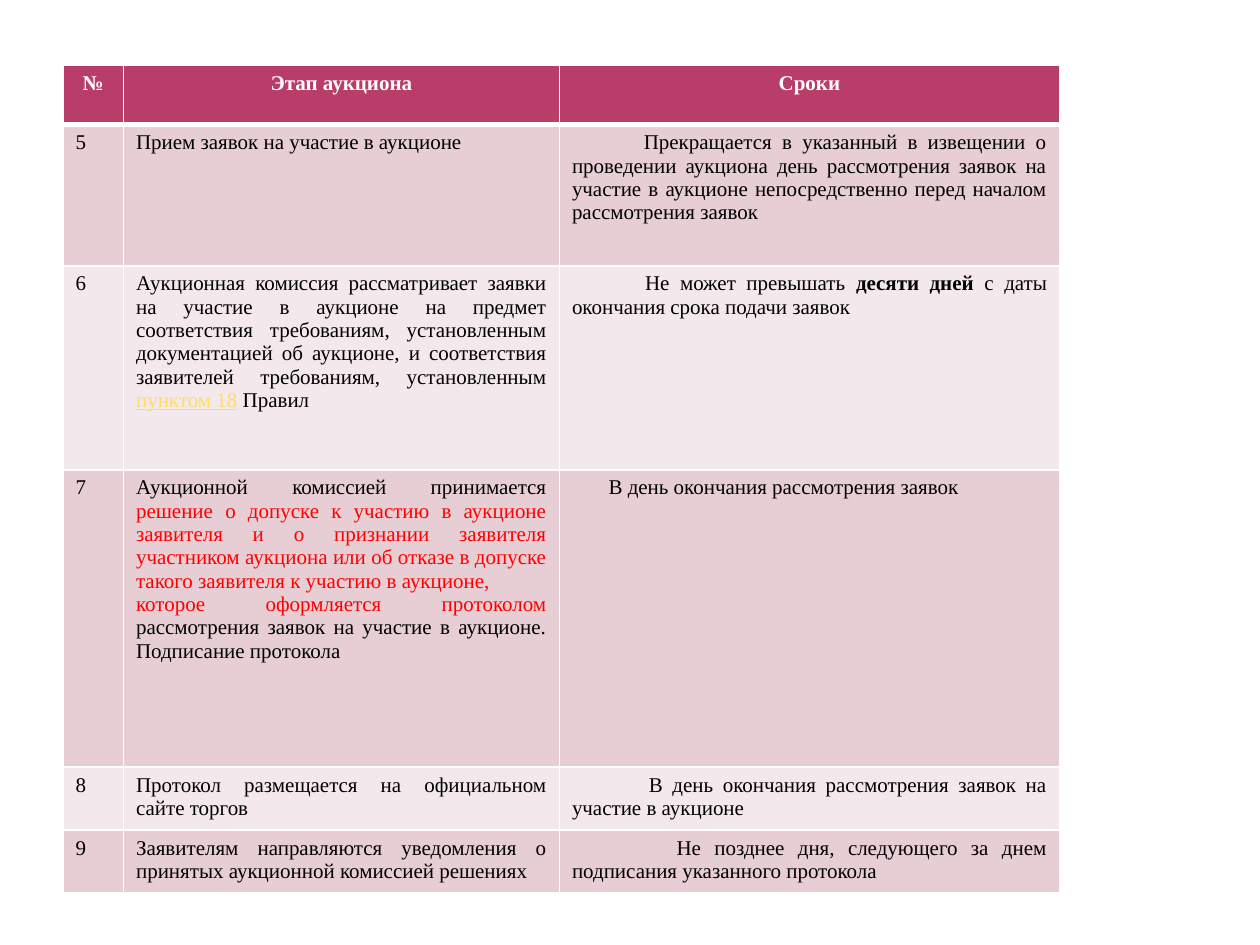
from lxml.etree import SubElement as Sub
from pptx import Presentation
from pptx.dml.color import RGBColor
from pptx.enum.text import PP_ALIGN as Align
from pptx.oxml.ns import qn
from pptx.util import Inches, Pt

# Content: a cell is a list of paragraphs, a paragraph a list of (text, style)
HEAD = ["№", "Этап аукциона", "Сроки"]
RED, LINK, BOLD = {"color": "FF0000"}, {"color": "FFDE66", "underline": True}, {"bold": True}

# Number, stage, term, first-line indent of the term
STAGES = [
    ("5", [[("Прием заявок на участие в аукционе", {})]],
     [[("Прекращается в указанный в извещении о проведении аукциона день рассмотрения "
        "заявок на участие в аукционе непосредственно перед началом рассмотрения заявок", {})]],
     0.57),
    ("6", [[("Аукционная комиссия рассматривает заявки на участие в аукционе на предмет "
             "соответствия требованиям, установленным документацией об аукционе, и "
             "соответствия заявителей требованиям, установленным ", {}),
            ("пунктом 18", LINK), (" Правил", {})]],
     [[("Не может превышать ", {}), ("десяти дней ", BOLD),
       ("с даты окончания срока подачи заявок", {})]], 0.58),
    ("7", [[("Аукционной комиссией принимается ", {}),
            ("решение о допуске к участию в аукционе заявителя и о признании заявителя "
             "участником аукциона или об отказе в допуске такого заявителя к участию "
             "в аукционе, ", RED)],
           [("которое оформляется протоколом ", RED),
            ("рассмотрения заявок на участие в аукционе. Подписание протокола", {})]],
     [[("В день окончания рассмотрения заявок", {})]], 0.29),
    ("8", [[("Протокол размещается на официальном сайте торгов", {})]],
     [[("В день окончания рассмотрения заявок на участие в аукционе", {})]], 0.61),
    ("9", [[("Заявителям направляются уведомления о принятых аукционной комиссией "
             "решениях", {})]],
     [[("Не позднее дня, следующего за днем подписания указанного протокола", {})]], 0.83),
]

# Format
COLS = [0.48, 3.46, 3.97]
ROWS = [0.47, 1.12, 1.62, 2.36, 0.5, 0.5]
HEAD_FILL, BANDS, WHITE = "B83D68", ("E6CED4", "F3E8EB"), "FFFFFF"
BASE = {"name": "Times New Roman", "size": Pt(12), "bold": False,
        "underline": False, "color": "000000"}


def rgb(code):
    return RGBColor.from_string(code)


def edge(cell, tag, width):
    line = Sub(cell._tc.get_or_add_tcPr(), qn(f"a:{tag}"), w=str(Pt(width)))
    Sub(Sub(line, qn("a:solidFill")), qn("a:srgbClr"), val=WHITE)


def put(cell, paras, fill, align, indent=0, top=1, base=1):
    # Borders come before the fill in the cell properties
    for tag, width in (("lnL", 1), ("lnR", 1), ("lnT", top), ("lnB", base)):
        edge(cell, tag, width)
    cell.fill.solid()
    cell.fill.fore_color.rgb = rgb(fill)
    frame = cell.text_frame
    for i, runs in enumerate(paras):
        para = frame.add_paragraph() if i else frame.paragraphs[0]
        para.alignment = align
        if indent:
            para._p.get_or_add_pPr().set("indent", str(Inches(indent)))
        for text, style in runs:
            run = para.add_run()
            run.text = text
            for key, value in {**BASE, **style}.items():
                if key == "color":
                    run.font.color.rgb = rgb(value)
                else:
                    setattr(run.font, key, value)


def main():
    prs = Presentation()
    prs.slide_width, prs.slide_height = Inches(10), Inches(7.5)
    slide = prs.slides.add_slide(prs.slide_layouts[6])

    # Table grid
    table = slide.shapes.add_table(len(ROWS), len(COLS), Inches(0.5), Inches(0.52),
                                   Inches(sum(COLS)), Inches(sum(ROWS))).table
    for col, width in zip(table.columns, COLS):
        col.width = Inches(width)
    for row, height in zip(table.rows, ROWS):
        row.height = Inches(height)

    # Header row
    for c, text in enumerate(HEAD):
        put(table.cell(0, c), [[(text, {"bold": True, "color": WHITE})]],
            HEAD_FILL, Align.CENTER, base=3)

    # Stage rows
    for r, (num, stage, term, indent) in enumerate(STAGES, 1):
        fill, top = BANDS[(r - 1) % 2], 3 if r == 1 else 1
        put(table.cell(r, 0), [[(num, {})]], fill, Align.LEFT, top=top)
        put(table.cell(r, 1), stage, fill, Align.JUSTIFY, top=top)
        put(table.cell(r, 2), term, fill, Align.JUSTIFY, indent, top)

    prs.save("out.pptx")


if __name__ == "__main__":
    main()
